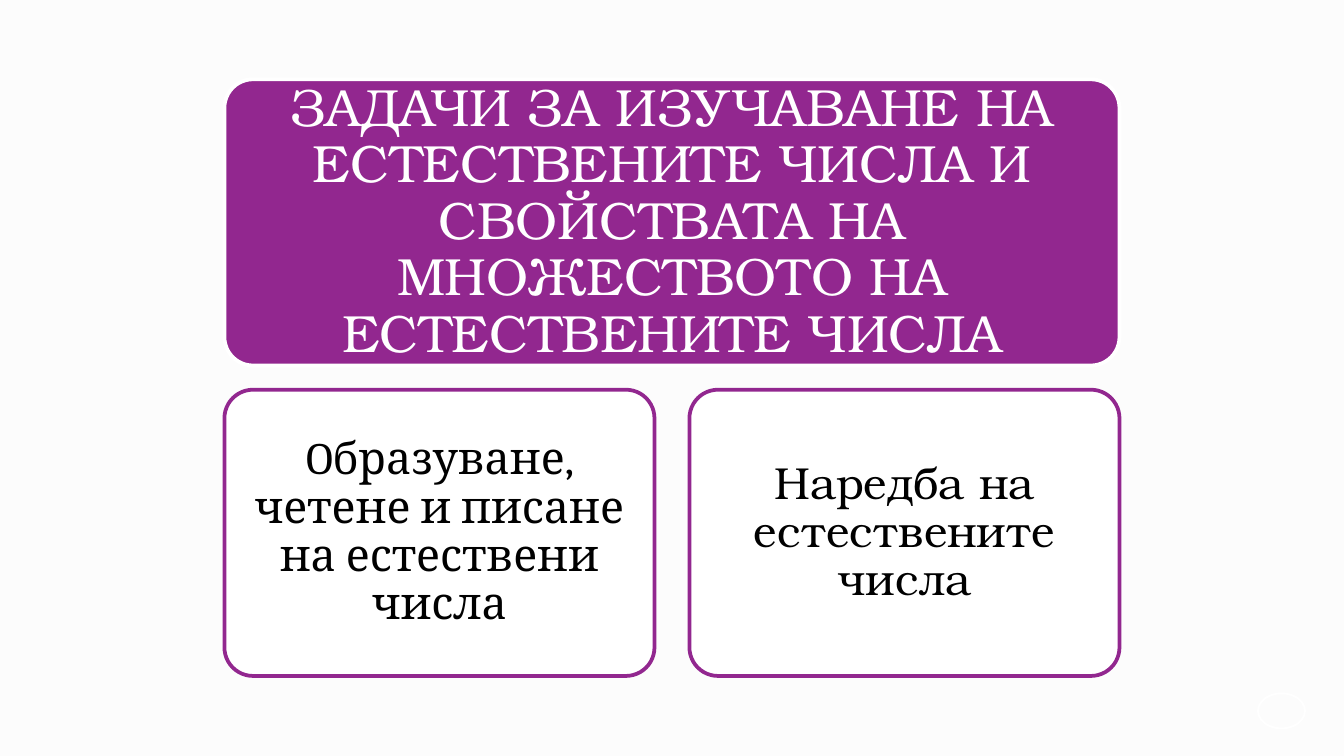
from pptx import Presentation
from pptx.dml.color import RGBColor
from pptx.enum.shapes import MSO_SHAPE
from pptx.enum.text import MSO_ANCHOR, PP_ALIGN
from pptx.util import Inches, Pt

ROUNDED = MSO_SHAPE.ROUNDED_RECTANGLE
OVAL = MSO_SHAPE.OVAL
MIDDLE = MSO_ANCHOR.MIDDLE
CENTER = PP_ALIGN.CENTER

PURPLE, WHITE, BLACK, PAPER = "92278F", "FFFFFF", "000000", "FCFCFC"
SERIF, PLAIN_SERIF = "TeX Gyre Bonum", "Cambria"

PAGE_WIDTH = 10
LEFT, WIDTH = 1.67, 6.66
TITLE_TOP, TASK_TOP, HEIGHT = 0.59, 2.9, 2.13
TASK_WIDTH = 3.2

TITLE = ("ЗАДАЧИ ЗА ИЗУЧАВАНЕ НА ЕСТЕСТВЕНИТЕ ЧИСЛА И "
         "СВОЙСТВАТА НА МНОЖЕСТВОТО НА ЕСТЕСТВЕНИТЕ ЧИСЛА")
TASKS = [
    ("Oбразуване, четене и писане на естествени числа", PLAIN_SERIF),
    ("Наредба на естествените числа", SERIF),
]


def color(hex_string):
    return RGBColor.from_string(hex_string)


def add_outlined(page, kind, left, top, width, height, line, weight):
    shape = page.shapes.add_shape(kind, Inches(left), Inches(top),
                                  Inches(width), Inches(height))
    shape.shadow.inherit = False
    shape.fill.background()
    shape.line.color.rgb = color(line)
    shape.line.width = Pt(weight)
    return shape


def add_card(page, left, top, width, fill, line, text, font, size, ink, inset):
    card = add_outlined(page, ROUNDED, left, top, width, HEIGHT, line, 2)
    card.adjustments[0] = 0.1
    card.fill.solid()
    card.fill.fore_color.rgb = color(fill)

    frame = card.text_frame
    frame.word_wrap = True
    frame.vertical_anchor = MIDDLE
    frame.margin_left = frame.margin_right = Inches(inset)
    frame.margin_top = frame.margin_bottom = Inches(inset)

    para = frame.paragraphs[0]
    para.text = text
    para.alignment = CENTER
    para.line_spacing = 0.9
    para.font.name = font
    para.font.size = Pt(size)
    para.font.color.rgb = color(ink)


def main():
    # Widescreen page, 16:9
    deck = Presentation()
    deck.slide_width = Inches(PAGE_WIDTH)
    deck.slide_height = Inches(PAGE_WIDTH * 9 / 16)
    page = deck.slides.add_slide(deck.slide_layouts[6])
    page.background.fill.solid()
    page.background.fill.fore_color.rgb = color(PAPER)

    # Page number ring
    add_outlined(page, OVAL, 9.36, 5.16, 0.35, 0.26, WHITE, 1)

    # Title card
    add_card(page, LEFT, TITLE_TOP, WIDTH, PURPLE, WHITE,
             TITLE, SERIF, 28, WHITE, 0.12)

    # Task cards, spread to both edges of the title
    step = (WIDTH - TASK_WIDTH) / (len(TASKS) - 1)
    for index, (text, font) in enumerate(TASKS):
        add_card(page, LEFT + index * step, TASK_TOP, TASK_WIDTH, WHITE, PURPLE,
                 text, font, 24, BLACK, 0.1)

    deck.save("out.pptx")


if __name__ == "__main__":
    main()
